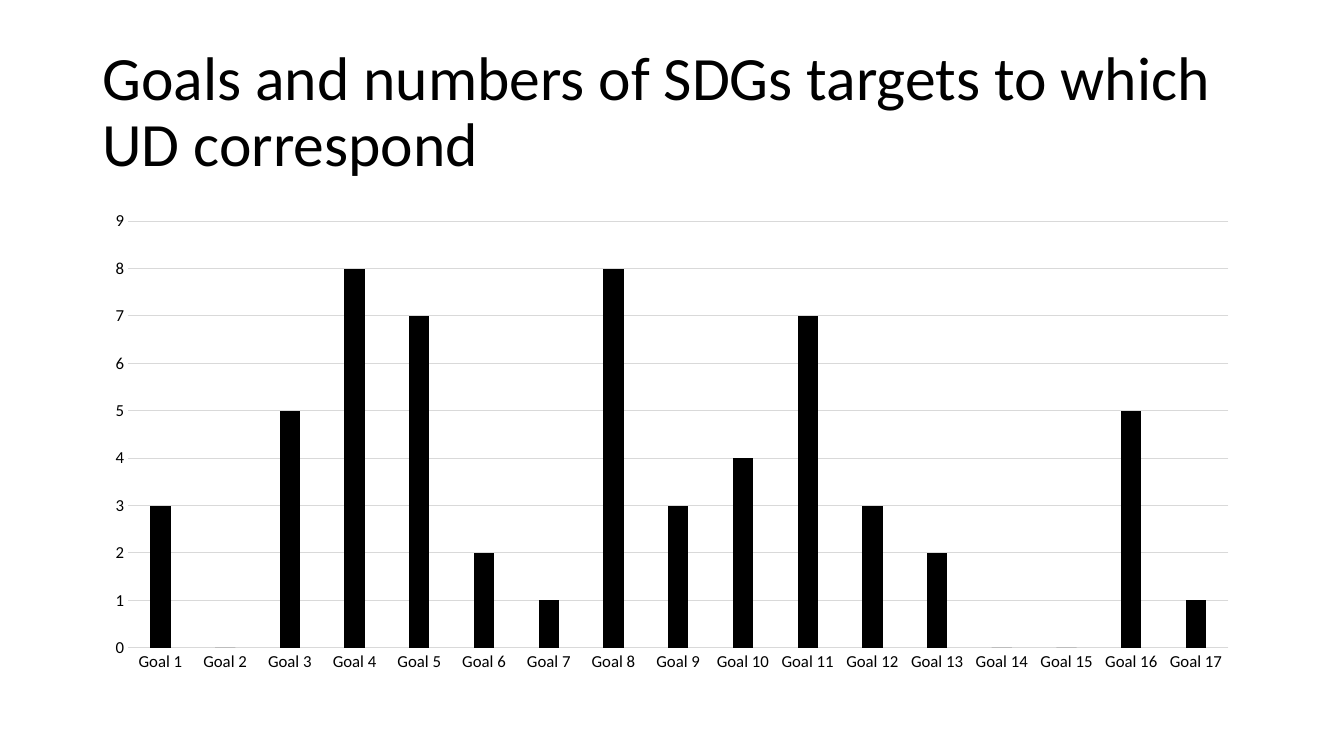
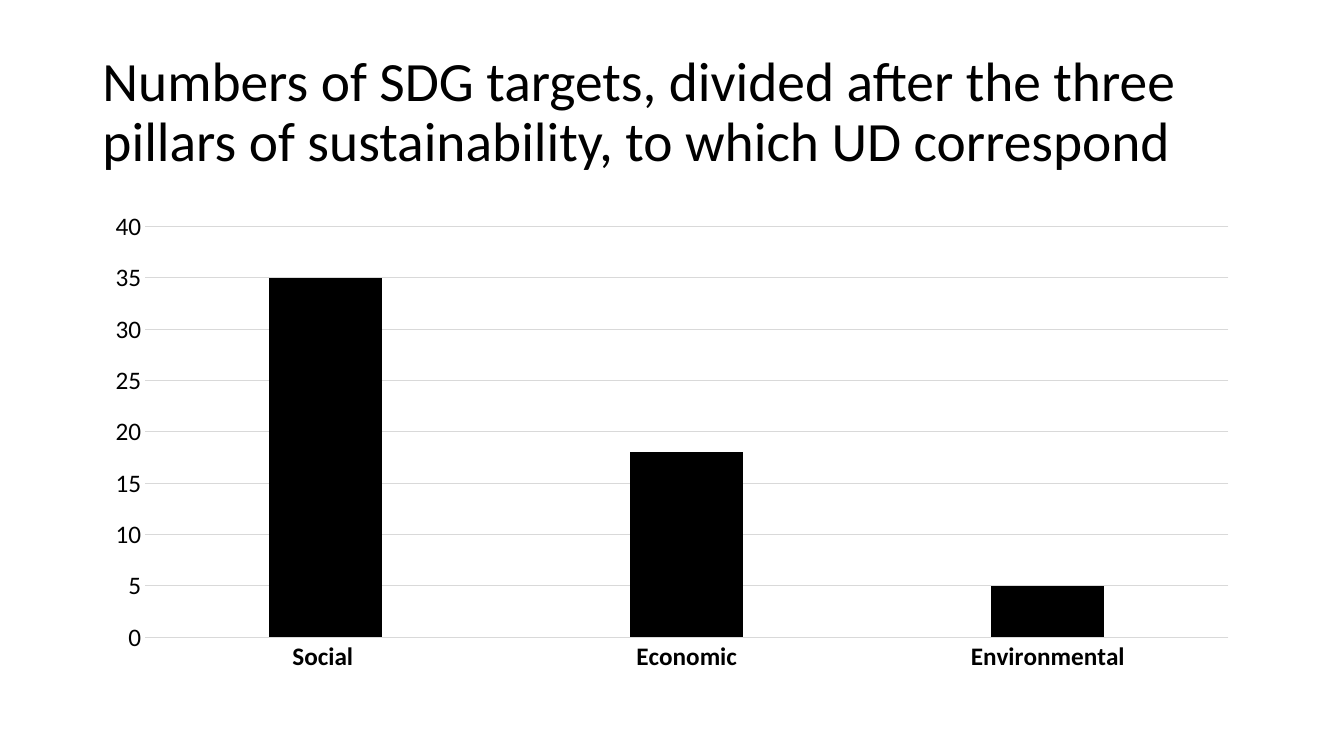
from pptx import Presentation
from pptx.chart import data as cd
from pptx.dml import color as dc
from pptx.enum import chart as ch, text as tx
from pptx.util import Pt


class Deck:
    face = "Calibri"
    hues = {"ink": "000000", "rule": "D9D9D9", "paper": "FFFFFF"}
    left, width = 66, 828

    def __init__(self):
        self.prs = Presentation()
        self.prs.slide_width, self.prs.slide_height = Pt(960), Pt(540)
        self.slide = None

    def hue(self, key):
        return dc.RGBColor.from_string(self.hues[key])

    def style(self, font, size, bold=False):
        font.name, font.size, font.bold = self.face, Pt(size), bold
        font.color.rgb = self.hue("ink")

    def rule(self, line):
        line.color.rgb = self.hue("rule")
        line.width = Pt(0.75)

    def page(self):
        self.slide = self.prs.slides.add_slide(self.prs.slide_layouts[5])
        fill = self.slide.background.fill
        fill.solid()
        fill.fore_color.rgb = self.hue("paper")

    def title(self, words, size):
        box = self.slide.shapes.title
        box.left, box.top = Pt(self.left), Pt(28.8)
        box.width, box.height = Pt(self.width), Pt(104.4)
        frame = box.text_frame
        frame.word_wrap = True
        frame.auto_size = tx.MSO_AUTO_SIZE.NONE
        frame.vertical_anchor = tx.MSO_ANCHOR.MIDDLE
        para = frame.paragraphs[0]
        para.alignment = tx.PP_ALIGN.LEFT
        para.line_spacing = 0.9
        run = para.add_run()
        run.text = words
        self.style(run.font, size)

    def columns(self, names, vals, size, top, step, bold=False):
        data = cd.CategoryChartData(number_format="General")
        data.categories = names
        data.add_series("Series 1", vals)
        chart = self.slide.shapes.add_chart(
            ch.XL_CHART_TYPE.COLUMN_CLUSTERED,
            Pt(self.left), Pt(144), Pt(self.width), Pt(342.7), data).chart
        chart.has_legend = chart.has_title = False
        self.style(chart.font, size)
        plot = chart.plots[0]
        plot.gap_width, plot.overlap = 219, -27
        plot.vary_by_categories = False
        fill = plot.series[0].format.fill
        fill.solid()
        fill.fore_color.rgb = self.hue("ink")
        cat, val = chart.category_axis, chart.value_axis
        for axis, heavy in ((cat, bold), (val, False)):
            axis.major_tick_mark = axis.minor_tick_mark = ch.XL_TICK_MARK.NONE
            self.style(axis.tick_labels.font, size, heavy)
        self.rule(cat.format.line)
        val.format.line.fill.background()
        val.has_major_gridlines = True
        self.rule(val.major_gridlines.format.line)
        val.minimum_scale, val.maximum_scale, val.major_unit = 0, top, step


def main():
    deck = Deck()

    deck.page()
    deck.title("Goals and numbers of SDGs targets to which UD correspond", 44)
    goals = [3, 0, 5, 8, 7, 2, 1, 8, 3, 4, 7, 3, 2, 0, 0, 5, 1]
    names = [f"Goal {n}" for n in range(1, len(goals) + 1)]
    deck.columns(names, goals, 12, 9, 1)

    deck.page()
    deck.title("Numbers of SDG targets, divided after the three pillars of "
               "sustainability, to which UD correspond", 39.6)
    deck.columns(["Social ", "Economic", "Environmental"], [35, 18, 5],
                 18, 40, 5, bold=True)

    deck.prs.save("out.pptx")


if __name__ == "__main__":
    main()
